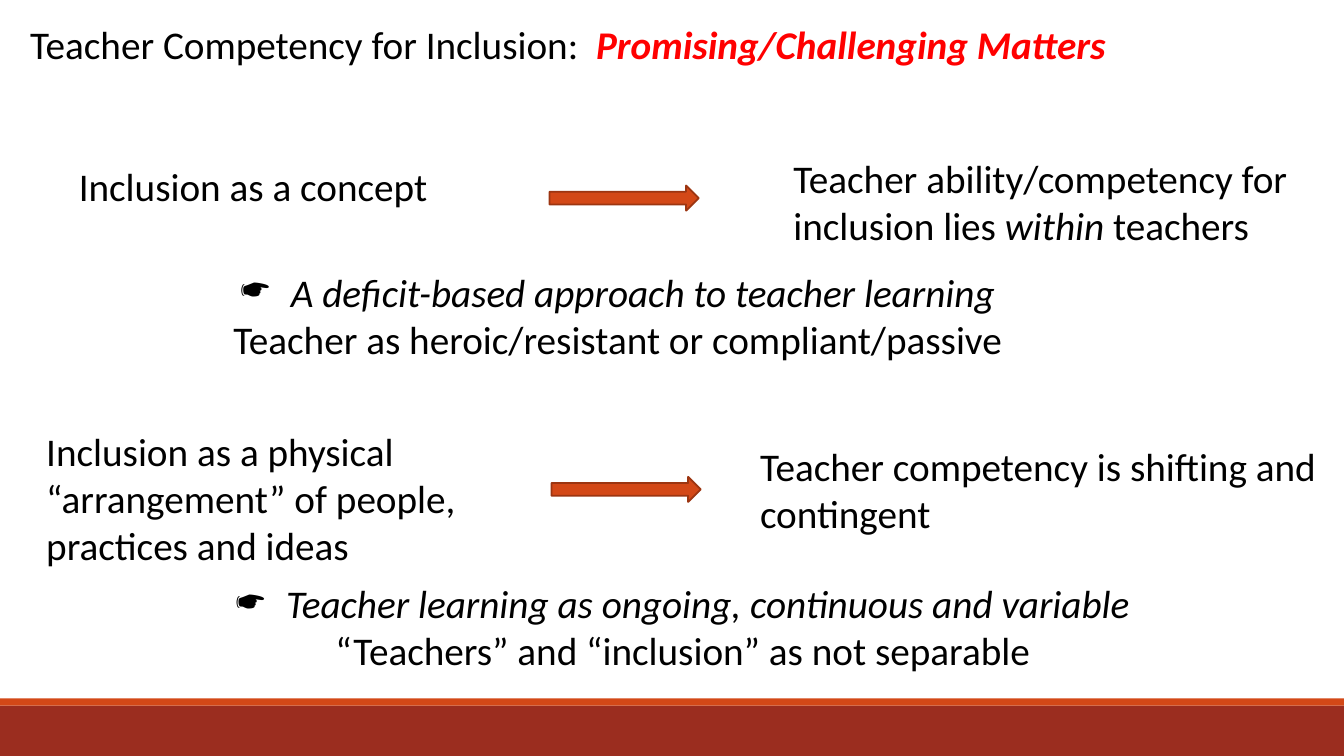
from lxml import etree
from pptx import Presentation
from pptx.dml.color import RGBColor
from pptx.enum.shapes import MSO_SHAPE
from pptx.enum.text import PP_ALIGN
from pptx.oxml.ns import qn
from pptx.util import Inches, Pt

RECT = MSO_SHAPE.RECTANGLE
ARROW = MSO_SHAPE.RIGHT_ARROW
LEFT = PP_ALIGN.LEFT
CENTER = PP_ALIGN.CENTER
ORANGE = "D34817"


def color(code):
    return RGBColor.from_string(code)


def add_block(slide, kind, box, fill, line=None):
    shape = slide.shapes.add_shape(kind, *map(Inches, box))
    shape.shadow.inherit = False
    shape.fill.solid()
    shape.fill.fore_color.rgb = color(fill)
    if line:
        shape.line.color.rgb = color(line)
        shape.line.width = Pt(1.25)
    else:
        shape.line.fill.background()


def add_arrow(slide, left, top):
    add_block(slide, ARROW, (left, top, 1.48, 0.25), ORANGE, "9C3511")


def add_run(para, text, bold=False, italic=False, ink="000000"):
    run = para.add_run()
    run.text = text
    font = run.font
    font.name, font.size = "Calibri", Pt(28)
    font.bold, font.italic = bold, italic
    font.color.rgb = color(ink)


def add_bullet(para, mark):
    props = para._p.get_or_add_pPr()
    props.set("marL", str(Inches(0.5)))
    props.set("indent", str(Inches(-0.5)))
    etree.SubElement(props, qn("a:buChar")).set("char", mark)


def add_text(slide, box, *paras, align=LEFT, mark=None):
    """Each paragraph is a list of (text, format) runs; mark bullets the first."""
    frame = slide.shapes.add_textbox(*map(Inches, box)).text_frame
    frame.word_wrap = True
    for i, runs in enumerate(paras):
        para = frame.add_paragraph() if i else frame.paragraphs[0]
        para.alignment = align
        if mark and i == 0:
            add_bullet(para, mark)
        for text, style in runs:
            add_run(para, text, **style)


def add_point(slide, box, lead, detail):
    add_text(slide, box, [(lead, {"italic": True})], [(detail, {})],
             align=CENTER, mark="☛")


def main():
    prs = Presentation()
    prs.slide_width, prs.slide_height = Inches(13.33), Inches(7.5)
    slide = prs.slides.add_slide(prs.slide_layouts[6])

    add_block(slide, RECT, (0, 7, 13.33, 0.5), "9B2D1F")
    add_block(slide, RECT, (0, 6.93, 13.33, 0.07), ORANGE)
    add_text(slide, (0.2, 0.15, 11.39, 0.57), [
        ("Teacher Competency for Inclusion:  ", {}),
        ("Promising/Challenging Matters",
         {"bold": True, "italic": True, "ink": "FF0000"})])

    add_text(slide, (0.36, 1.56, 4.3, 0.57),
             [("Inclusion as a concept", {})], align=CENTER)
    add_arrow(slide, 5.45, 1.84)
    add_text(slide, (7.77, 1.48, 5.56, 1.04), [
        ("Teacher ability/competency for inclusion lies ", {}),
        ("within", {"italic": True}),
        (" teachers", {})])
    add_point(slide, (2.11, 2.61, 8.03, 1.51),
              "A deficit-based approach to teacher learning",
              "Teacher as heroic/resistant or compliant/passive")

    add_text(slide, (0.36, 4.19, 4.98, 1.51), [
        ("Inclusion as a physical “arrangement” of people, "
         "practices and ideas", {})])
    add_arrow(slide, 5.47, 4.73)
    add_text(slide, (7.44, 4.34, 5.73, 1.04),
             [("Teacher competency is shifting and contingent", {})])
    add_point(slide, (2.16, 5.7, 9.22, 1.04),
              "Teacher learning as ongoing, continuous and variable",
              "“Teachers” and “inclusion” as not separable")

    prs.save("out.pptx")


if __name__ == "__main__":
    main()
